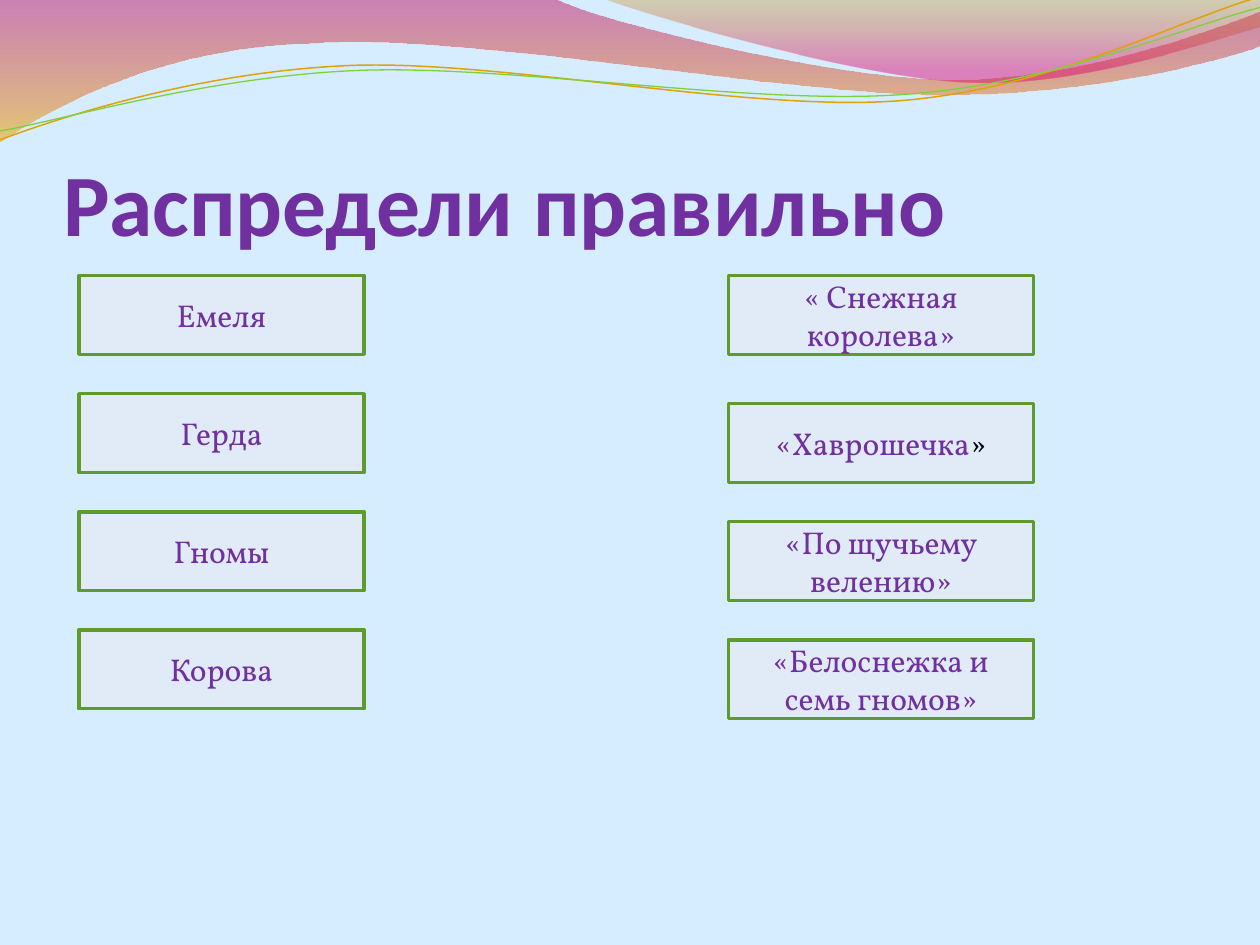
from math import cos, radians, sin

from lxml.etree import SubElement
from pptx import Presentation
from pptx.dml.color import RGBColor as RGB
from pptx.enum.shapes import MSO_SHAPE as Shape
from pptx.enum.text import MSO_ANCHOR as Anchor, MSO_AUTO_SIZE as AutoSize, PP_ALIGN as Align
from pptx.oxml.ns import qn
from pptx.util import Inches, Pt

COLORS = {
    "sky": "D6ECFF", "purple": "7030A0", "black": "000000",
    "box": "E1EBF7", "border": "5E9B2C",
    "crimson": "BD0059", "amber": "F0AB00", "ochre": "C38B00", "pink": "E1006B",
    "gold_line": "E0A209", "green_line": "7FD13B",
}
COLORS = {name: RGB.from_string(value) for name, value in COLORS.items()}


def add_text(para, text, size=18, font="Vollkorn", color="purple", bold=False):
    span = para.add_run()
    span.text = text
    span.font.size = Pt(size)
    span.font.name = font
    span.font.bold = bold
    span.font.color.rgb = COLORS[color]


def add_curve(page, segments, closed):
    """Draw segments in inches: one point is a line, three are a Bezier curve."""
    points = [(Inches(x), Inches(y)) for segment in segments for x, y in segment]
    builder = page.shapes.build_freeform(*points[0])
    builder.add_line_segments(points[1:], close=closed)
    curve = builder.convert_to_shape()
    curve.shadow.inherit = False
    lines = iter(list(curve._element.iter(qn("a:lnTo"))))
    for segment in segments[1:]:
        first = next(lines)
        if len(segment) == 3:
            first.tag = qn("a:cubicBezTo")
            for line in (next(lines), next(lines)):
                first.append(line[0])
                line.getparent().remove(line)
    return curve


deck = Presentation()
deck.slide_width, deck.slide_height = Inches(10), Inches(7.5)
page = deck.slides.add_slide(deck.slide_layouts[5])
page.background.fill.solid()
page.background.fill.fore_color.rgb = COLORS["sky"]

# Translucent ribbons: outline, then (position, colour, opacity in percent)
ribbons = [
    ([[(0, 0)], [(4.4, -0.01)],
      [(4.76, 0.17), (6.64, 0.63), (7.58, 0.63)],
      [(8.53, 0.63), (9.58, 0.26), (10, 0.09)],
      [(10.01, 0.36)],
      [(9.83, 0.44), (8.7, 0.76), (7.46, 0.75)],
      [(6.22, 0.75), (3.82, 0.28), (2.57, 0.34)],
      [(1.29, 0.36), (0.46, 0.83), (-0.01, 1.13)]],
     [(0, "crimson", 45), (1, "amber", 55)]),
    ([[(4.79, -0.01)],
      [(5.09, 0.11), (6.82, 0.62), (7.69, 0.65)],
      [(8.56, 0.69), (9.61, 0.32), (10, 0.21)],
      [(10, 0)]],
     [(0, "ochre", 30), (0.8, "pink", 45)]),
]
for outline, stops in ribbons:
    ribbon = add_curve(page, outline, closed=True)
    ribbon.line.fill.background()
    ribbon.fill.gradient()
    ribbon.fill.gradient_angle = 270
    for stop, (position, color, _) in zip(ribbon.fill.gradient_stops, stops):
        stop.position = position
        stop.color.rgb = COLORS[color]
    tints = list(ribbon._element.spPr.iter(qn("a:srgbClr")))
    for tint, (_, _, opacity) in zip(tints, stops):
        SubElement(tint, qn("a:alpha"), val=str(opacity * 1000))

# Thin waves, tilted about their centres
TILT = 2.7
cosine, sine = cos(radians(TILT)), sin(radians(TILT))
waves = [
    ([[(0, 1.11)],
      [(0.48, 0.93), (1.58, 0.57), (2.77, 0.52)],
      [(3.95, 0.47), (5.93, 0.89), (7.13, 0.8)],
      [(8.33, 0.71), (9.38, 0.15), (9.98, -0.02)]],
     (4.99, 0.58), "gold_line", 0.85),
    ([[(0, 1.04)],
      [(0.47, 0.96), (1.64, 0.61), (2.83, 0.56)],
      [(4.03, 0.51), (5.97, 0.84), (7.17, 0.75)],
      [(8.36, 0.67), (9.41, 0.21), (10, 0.06)]],
     (5, 0.59), "green_line", 0.75),
]
for segments, (mid_x, mid_y), color, width in waves:
    level = [[(mid_x + (x - mid_x) * cosine - (y - mid_y) * sine,
               mid_y + (x - mid_x) * sine + (y - mid_y) * cosine)
              for x, y in segment] for segment in segments]
    wave = add_curve(page, level, closed=False)
    wave.rotation = 360 - TILT
    wave.fill.background()
    wave.line.color.rgb = COLORS[color]
    wave.line.width = Pt(width)

title = page.shapes.title
title.left, title.top, title.width, title.height = map(Inches, (0.5, 0.77, 9, 1.25))
frame = title.text_frame
frame.auto_size = AutoSize.NONE
frame.vertical_anchor = Anchor.BOTTOM
frame.margin_left = frame.margin_right = frame.margin_bottom = 0
frame.margin_top = Inches(0.05)
frame.paragraphs[0].alignment = Align.LEFT
add_text(frame.paragraphs[0], "Распредели правильно", size=50, font="Calibri", bold=True)

# Boxes on a grid of 128 columns by 96 rows; the lower right ones drop by one row
COLUMN, ROW = deck.slide_width / 128, deck.slide_height / 96
heroes = ["Емеля", "Герда", "Гномы", "Корова"]
tales = ["« Снежная королева»", "«Хаврошечка", "«По щучьему велению»",
         "«Белоснежка и семь гномов»"]
for left, width, drop, labels in [(8, 29, 0, heroes), (74, 31, 1, tales)]:
    for index, label in enumerate(labels):
        top = 28 + 12 * index + (drop if index else 0)
        box = page.shapes.add_shape(
            Shape.RECTANGLE, int(left * COLUMN), int(top * ROW),
            int(width * COLUMN), int(8 * ROW))
        box.shadow.inherit = False
        box.fill.solid()
        box.fill.fore_color.rgb = COLORS["box"]
        box.line.color.rgb = COLORS["border"]
        box.line.width = Pt(2)
        box.text_frame.word_wrap = True
        box.text_frame.vertical_anchor = Anchor.MIDDLE
        para = box.text_frame.paragraphs[0]
        para.alignment = Align.CENTER
        add_text(para, label)
        if label == "«Хаврошечка":
            add_text(para, "»", color="black")

deck.save("out.pptx")
